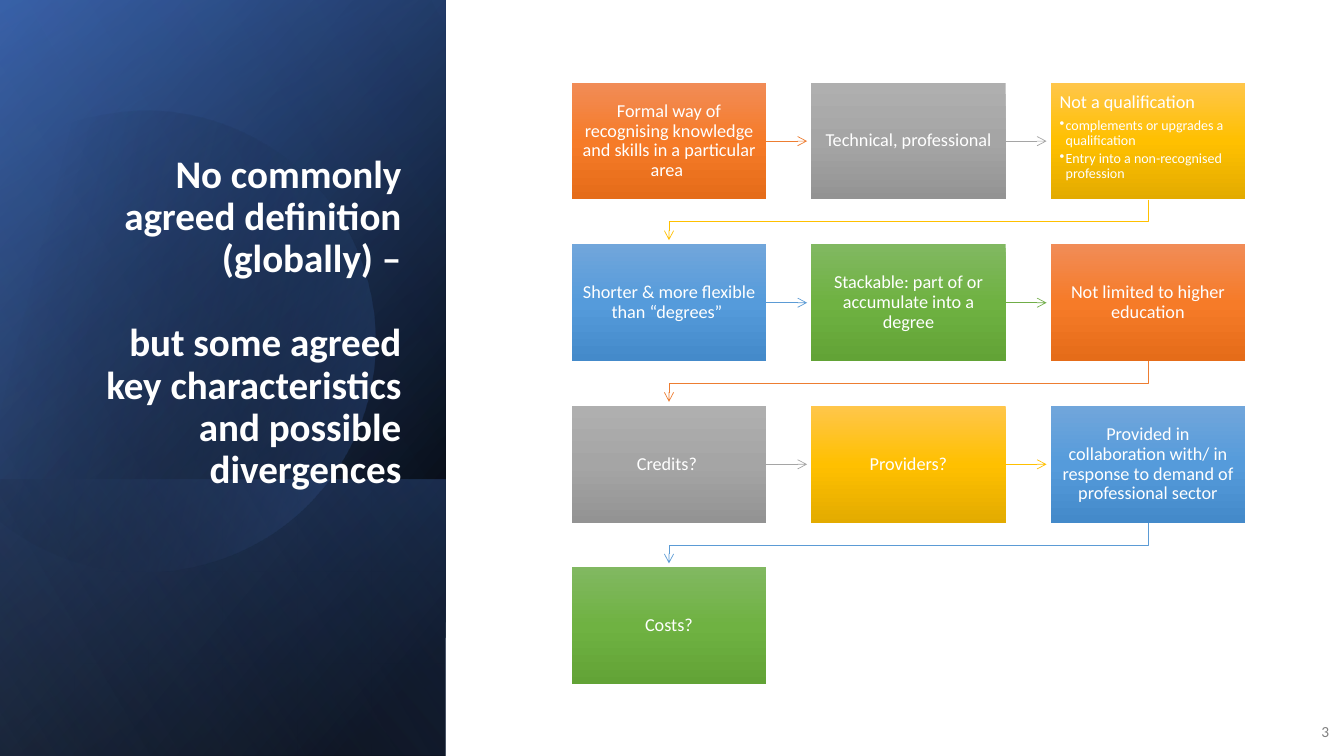
"""Build a slide with a dark title panel and a ten-step flow of boxes."""
from dataclasses import dataclass
from math import cos, radians, sin
from typing import Any

from lxml.etree import SubElement
from pptx import Presentation
from pptx.dml.color import RGBColor
from pptx.enum.shapes import MSO_CONNECTOR, MSO_SHAPE
from pptx.enum.text import MSO_ANCHOR, PP_ALIGN
from pptx.oxml import parse_xml
from pptx.oxml.ns import nsdecls, qn
from pptx.util import Inches, Pt

RECT = MSO_SHAPE.RECTANGLE
STRAIGHT = MSO_CONNECTOR.STRAIGHT
TOP, MIDDLE, BOTTOM = MSO_ANCHOR.TOP, MSO_ANCHOR.MIDDLE, MSO_ANCHOR.BOTTOM
LEFT, CENTER, RIGHT = PP_ALIGN.LEFT, PP_ALIGN.CENTER, PP_ALIGN.RIGHT

WHITE = RGBColor(0xFF, 0xFF, 0xFF)
GRAY = RGBColor(0x80, 0x80, 0x80)
BLACK = RGBColor(0x00, 0x00, 0x00)
NAVY = RGBColor(0x2F, 0x55, 0x97)
BLUE = RGBColor(0x44, 0x72, 0xC4)
PALE = RGBColor(0x8F, 0xAA, 0xDC)

FONT = "Calibri"
COLS = 3
BOX_W, BOX_H = 1.93, 1.16
FLOW_X, FLOW_Y = 5.67, 0.82
STEP_X, STEP_Y = (10.42 - FLOW_X) / 2, (5.63 - FLOW_Y) / 3
GAP = 0.04
PANEL_W, PANEL_H = 4.42, 7.5
DISC_X, DISC_Y, DISC_W, DISC_H = -0.55, 1.06, 4.27, 4.57
TILT = 16.1


@dataclass
class Stop:
    pos: int
    color: RGBColor
    alpha: int = 100


@dataclass
class Layer:
    top: float
    angle: int
    stops: list[Stop]


@dataclass
class Tone:
    line: RGBColor
    shades: list[RGBColor]


@dataclass
class Step:
    text: str
    points: tuple[str, ...] = ()


def tone(*codes: str) -> Tone:
    line, *shades = [RGBColor.from_string(code) for code in codes]
    return Tone(line, shades)


TONES = [
    tone("ED7D31", "F18C57", "F67B28", "E56C19"),
    tone("A5A5A5", "AFAFAF", "A5A5A5", "939393"),
    tone("FFC000", "FFC64B", "FFC000", "E3AB00"),
    tone("5B9BD5", "71A6DB", "559BDB", "448ACA"),
    tone("70AD47", "81B861", "6FB242", "62A336"),
]
BASE = [
    Layer(0, 50, [Stop(8, BLACK), Stop(100, NAVY)]),
    Layer(0, 30, [Stop(0, BLACK, 0), Stop(99, BLUE, 46)]),
    Layer(4.76, 130, [Stop(2, BLUE, 29), Stop(100, BLACK, 30)]),
]
DISC = [Stop(29, BLACK, 0), Stop(100, BLUE, 43)]
CURVE = [
    ("moveTo", [(1.49, 1.1)]),
    ("cubicBezTo", [(2.46, 1.12), (3.35, 1.77), (3.63, 2.75)]),
    ("cubicBezTo", [(3.98, 3.97), (3.28, 5.23), (2.07, 5.58)]),
    ("cubicBezTo", [(1.31, 5.8), (0.53, 5.61), (-0.03, 5.14)]),
    ("lnTo", [(-0.15, 5.03)]),
    ("lnTo", [(-0.15, 1.75)]),
    ("lnTo", [(0, 1.61)]),
    ("cubicBezTo", [(0.23, 1.42), (0.5, 1.28), (0.8, 1.19)]),
    ("cubicBezTo", [(1.03, 1.13), (1.26, 1.1), (1.49, 1.1)]),
    ("close", []),
]
GLOW = Layer(0, 120, [Stop(0, BLACK, 0), Stop(99, PALE, 11)])
STEPS = [
    Step("Formal way of recognising knowledge and skills in a particular area "),
    Step("Technical, professional"),
    Step("Not a qualification", ("complements or upgrades a qualification",
                                 "Entry into a non-recognised profession")),
    Step("Shorter & more flexible than “degrees” "),
    Step("Stackable: part of or accumulate into a degree"),
    Step("Not limited to higher education"),
    Step("Credits? "),
    Step("Providers?"),
    Step("Provided in collaboration with/ in response to demand of "
         "professional sector"),
    Step("Costs?"),
]


def shade(shape: Any, stops: list[Stop], angle: int) -> None:
    shape.shadow.inherit = False
    shape.line.fill.background()
    shape.fill.gradient()
    marks = "".join(
        f'<a:gs pos="{s.pos * 1000}"><a:srgbClr val="{s.color}">'
        f'<a:alpha val="{s.alpha * 1000}"/></a:srgbClr></a:gs>' for s in stops)
    props = shape._element.spPr
    props.replace(props.find(qn("a:gradFill")), parse_xml(
        f'<a:gradFill {nsdecls("a")} rotWithShape="1"><a:gsLst>{marks}</a:gsLst>'
        f'<a:lin ang="{angle * 60000}" scaled="0"/></a:gradFill>'))


def write(frame: Any, text: str, *, size: float, color: RGBColor = WHITE,
          bold: bool = False, align: PP_ALIGN = LEFT, space: float = 0.9,
          after: float = 0, bullet: bool = False) -> None:
    para = frame.paragraphs[0]
    if para.runs:
        para = frame.add_paragraph()
    para.alignment, para.line_spacing, para.space_after = align, space, Pt(after)
    run = para.add_run()
    run.text = text
    font = run.font
    font.name, font.size, font.bold = FONT, Pt(size), bold
    font.color.rgb = color
    if bullet:
        props = para._p.get_or_add_pPr()
        props.set("marL", str(Inches(0.06)))
        props.set("indent", str(-Inches(0.06)))
        SubElement(props, qn("a:buChar")).set("char", "•")


def label(shapes: Any, x: float, y: float, w: float, h: float,
          anchor: MSO_ANCHOR) -> Any:
    box = shapes.add_textbox(Inches(x), Inches(y), Inches(w), Inches(h))
    frame = box.text_frame
    frame.word_wrap, frame.vertical_anchor = True, anchor
    return frame


def trace(shapes: Any, spots: list[tuple[float, float]], close: bool) -> Any:
    first, *rest = [(Inches(x), Inches(y)) for x, y in spots]
    pen = shapes.build_freeform(*first)
    pen.add_line_segments(rest, close=close)
    return pen.convert_to_shape()


def add_layer(shapes: Any, layer: Layer) -> None:
    long = PANEL_H - layer.top
    x, y = (PANEL_W - long) / 2, layer.top + (long - PANEL_W) / 2
    rect = shapes.add_shape(RECT, Inches(x), Inches(y), Inches(long), Inches(PANEL_W))
    rect.rotation = 90
    rect._element.spPr.get_or_add_xfrm().set("flipH", "1")
    shade(rect, layer.stops, layer.angle)


def add_disc(shapes: Any) -> None:
    right, low = DISC_X + DISC_W, DISC_Y + DISC_H
    disc = trace(shapes, [(DISC_X, DISC_Y), (right, DISC_Y), (right, low),
                          (DISC_X, low)], True)
    route = next(disc._element.iter(qn("a:path")))
    for part in list(route):
        route.remove(part)
    c, s = cos(radians(TILT)), sin(radians(TILT))
    for kind, spots in CURVE:
        part = SubElement(route, qn(f"a:{kind}"))
        for x, y in spots:
            dx, dy = x - DISC_X - DISC_W / 2, y - DISC_Y - DISC_H / 2
            dot = SubElement(part, qn("a:pt"))
            dot.set("x", str(Inches(DISC_W / 2 + dx * c - dy * s)))
            dot.set("y", str(Inches(DISC_H / 2 + dx * s + dy * c)))
    disc.rotation = 360 - TILT
    shade(disc, DISC, 30)


def add_box(shapes: Any, step: Step, x: float, y: float, look: Tone) -> Any:
    box = shapes.add_shape(RECT, Inches(x), Inches(y), Inches(BOX_W), Inches(BOX_H))
    shade(box, [Stop(50 * i, c) for i, c in enumerate(look.shades)], 90)
    frame = box.text_frame
    frame.word_wrap = True
    frame.vertical_anchor = TOP if step.points else MIDDLE
    frame.margin_left = frame.margin_right = Inches(0.09)
    frame.margin_top = frame.margin_bottom = Inches(0.1)
    write(frame, step.text, size=13, align=LEFT if step.points else CENTER,
          after=4.5 if step.points else 0)
    for point in step.points:
        write(frame, point, size=10, after=1.5, bullet=True)
    return box


def add_arrow(shapes: Any, box: Any, x: float, y: float, turn: bool,
              color: RGBColor) -> None:
    if turn:
        start, end = x + BOX_W / 2, FLOW_X + BOX_W / 2
        low, bend, tip = y + BOX_H, y + BOX_H + 0.22, y + STEP_Y - GAP
        arrow = trace(shapes, [(start, low), (start, bend), (end, bend), (end, tip)],
                      False)
        arrow.fill.background()
        arrow.shadow.inherit = False
    else:
        mid = Inches(y + BOX_H / 2)
        arrow = shapes.add_connector(STRAIGHT, Inches(x + BOX_W), mid,
                                     Inches(x + STEP_X - GAP), mid)
        arrow.begin_connect(box, 3)
        SubElement(arrow._element.spPr, qn("a:effectLst"))
    arrow.line.color.rgb, arrow.line.width = color, Pt(0.5)
    SubElement(arrow.line._get_or_add_ln(), qn("a:tailEnd")).set("type", "arrow")


def main() -> None:
    deck = Presentation()
    deck.slide_width, deck.slide_height = Inches(13.33), Inches(7.5)
    shapes = deck.slides.add_slide(deck.slide_layouts[6]).shapes
    for layer in BASE:
        add_layer(shapes, layer)
    add_disc(shapes)
    add_layer(shapes, GLOW)
    title = label(shapes, 0.67, 1.5, 3.41, 3.43, BOTTOM)
    for text, after in (("No commonly agreed definition (globally) –", 30),
                        ("but some agreed key characteristics and possible "
                         "divergences", 0)):
        write(title, text, size=27.9, bold=True, align=RIGHT, after=after)
    page = label(shapes, 12.79, 7.06, 0.49, 0.4, MIDDLE)
    write(page, "3", size=11, color=GRAY, align=RIGHT, space=1)
    for i, step in enumerate(STEPS):
        row, col = divmod(i, COLS)
        x, y = FLOW_X + col * STEP_X, FLOW_Y + row * STEP_Y
        look = TONES[i % len(TONES)]
        box = add_box(shapes, step, x, y, look)
        if i < len(STEPS) - 1:
            add_arrow(shapes, box, x, y, col == COLS - 1, look.line)
    deck.save("out.pptx")


if __name__ == "__main__":
    main()
